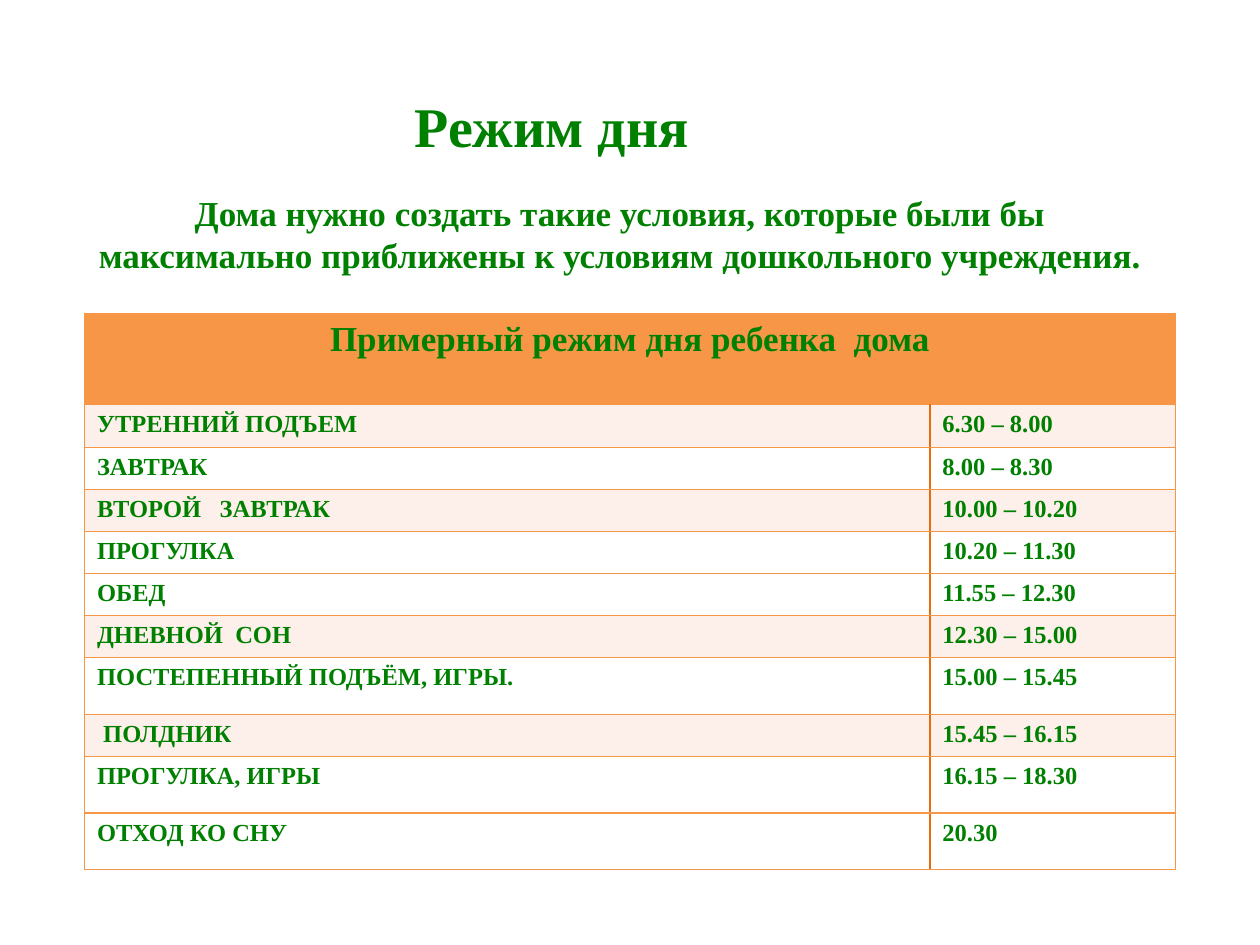
from lxml import etree
from pptx import Presentation
from pptx.dml.color import RGBColor
from pptx.enum.text import MSO_ANCHOR, MSO_AUTO_SIZE, PP_ALIGN
from pptx.oxml.ns import qn
from pptx.util import Inches, Pt

COLORS = {
    "text": "008000",
    "line": "F79646",
    "divider": "E46C0A",
    "header": "F79646",
    "tint": "FDEFE9",
    "plain": "FFFFFF",
}
FONT = "Times New Roman"

TABLE_TITLE = "Примерный режим дня ребенка  дома"
# Activity, time, row height, fill
SCHEDULE = [
    ("УТРЕННИЙ ПОДЪЕМ", "6.30 – 8.00", 0.34, "tint"),
    ("ЗАВТРАК", "8.00 – 8.30", 0.32, "plain"),
    ("ВТОРОЙ   ЗАВТРАК", "10.00 – 10.20", 0.32, "tint"),
    ("ПРОГУЛКА", "10.20 – 11.30", 0.32, "plain"),
    ("ОБЕД", "11.55 – 12.30", 0.32, "plain"),
    ("ДНЕВНОЙ  СОН", "12.30 – 15.00", 0.32, "tint"),
    ("ПОСТЕПЕННЫЙ ПОДЪЁМ, ИГРЫ.", "15.00 – 15.45", 0.45, "plain"),
    (" ПОЛДНИК", "15.45 – 16.15", 0.32, "tint"),
    ("ПРОГУЛКА, ИГРЫ", "16.15 – 18.30", 0.45, "plain"),
    ("ОТХОД КО СНУ", "20.30", 0.45, "plain"),
]


def write(tf, text, size, align=PP_ALIGN.LEFT):
    tf.text = text
    p = tf.paragraphs[0]
    p.alignment = align
    p.font.name = FONT
    p.font.size = Pt(size)
    p.font.bold = True
    p.font.color.rgb = RGBColor.from_string(COLORS["text"])


def set_borders(cell, **sides):
    tc_pr = cell._tc.get_or_add_tcPr()
    for side in "LRTB":
        ln = etree.SubElement(tc_pr, qn(f"a:ln{side}"), w=str(Pt(1)))
        fill = etree.SubElement(ln, qn("a:solidFill"))
        color = COLORS[sides.get(side, "line")]
        etree.SubElement(fill, qn("a:srgbClr"), val=color)


def style_cell(cell, fill, **sides):
    set_borders(cell, **sides)
    cell.fill.solid()
    cell.fill.fore_color.rgb = RGBColor.from_string(COLORS[fill])


def add_title(s, left, top, width, height):
    sp = s.shapes.title
    sp.left, sp.top, sp.width, sp.height = left, top, width, height
    tf = sp.text_frame
    tf.auto_size = MSO_AUTO_SIZE.NONE
    tf.vertical_anchor = MSO_ANCHOR.TOP
    write(tf, "Режим дня", 32)


def add_intro(s, left, top, width, height):
    tf = s.shapes.add_textbox(left, top, width, height).text_frame
    tf.word_wrap = True
    write(tf, "Дома нужно создать такие условия, которые были бы максимально "
              "приближены к условиям дошкольного учреждения.", 20, PP_ALIGN.CENTER)


def add_schedule(s, left, top, width, height):
    table = s.shapes.add_table(len(SCHEDULE) + 1, 2, left, top, width, height).table
    time_width = Inches(1.95)
    table.columns[0].width = width - time_width
    table.columns[1].width = time_width

    # Header across both columns
    table.rows[0].height = Inches(0.72)
    for cell in table.rows[0].cells:
        style_cell(cell, "header")
    table.cell(0, 0).merge(table.cell(0, 1))
    write(table.cell(0, 0).text_frame, TABLE_TITLE, 20, PP_ALIGN.CENTER)

    # One row per activity
    for i, (activity, time, row_height, fill) in enumerate(SCHEDULE, 1):
        table.rows[i].height = Inches(row_height)
        for j, (text, side) in enumerate([(activity, "R"), (time, "L")]):
            cell = table.cell(i, j)
            style_cell(cell, fill, **{side: "divider"})
            write(cell.text_frame, text, 14)


def main():
    prs = Presentation()
    prs.slide_width, prs.slide_height = Inches(10), Inches(7.5)
    s = prs.slides.add_slide(prs.slide_layouts[5])
    add_title(s, Inches(3.19), Inches(0.68), Inches(3.46), Inches(0.64))
    add_intro(s, Inches(0.67), Inches(1.47), Inches(8.5), Inches(0.77))
    add_schedule(s, Inches(0.67), Inches(2.49), Inches(8.66), Inches(4.41))
    prs.save("out.pptx")


if __name__ == "__main__":
    main()
